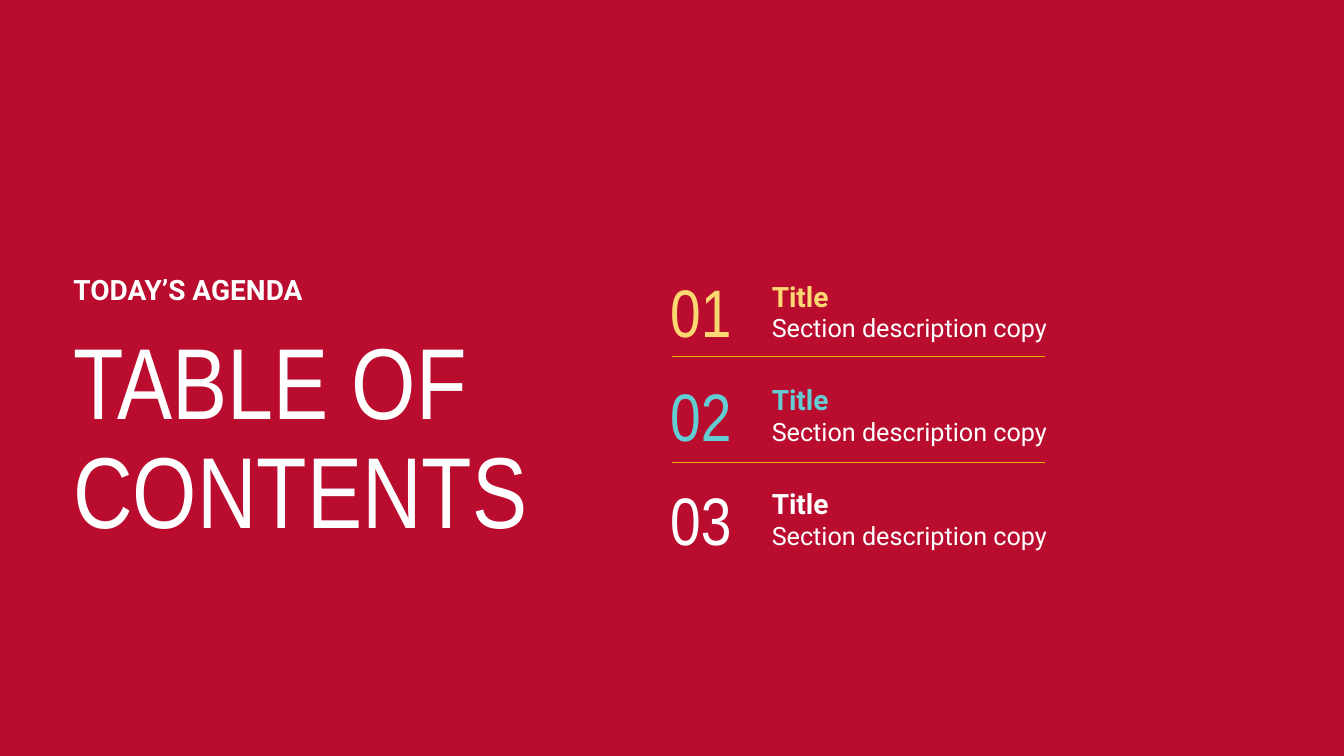
"""Build a table of contents slide with three numbered sections."""
import dataclasses

import lxml.etree
import pptx
import pptx.dml.color
import pptx.enum.shapes
import pptx.enum.text
import pptx.oxml.ns
import pptx.slide
import pptx.text.text
import pptx.util

Cm = pptx.util.Cm


@dataclasses.dataclass(frozen=True)
class Theme:
    background: str = "BA0C2F"
    white: str = "FFFFFF"
    yellow: str = "FBD872"
    teal: str = "63CDD4"
    rule: str = "EAB000"
    display_font: str = "Arial Narrow"
    body_font: str = "Roboto"
    title_size: int = 72
    number_size: int = 48
    heading_size: int = 20
    copy_size: int = 18
    rule_width: float = 0.75


THEME = Theme()


@dataclasses.dataclass(frozen=True)
class Style:
    font: str
    size: int
    colour: str
    bold: bool = False


@dataclasses.dataclass(frozen=True)
class Frame:
    left: float
    top: float
    width: float
    height: float


@dataclasses.dataclass(frozen=True)
class Section:
    number: str
    title: str
    description: str
    colour: str


SECTIONS = [
    Section("01", "Title", "Section description copy", THEME.yellow),
    Section("02", "Title", "Section description copy", THEME.teal),
    Section("03", "Title", "Section description copy", THEME.white),
]
SECTION_PITCH = 2.61
RULE_LEFT, RULE_RIGHT = 16.94, 26.34
RULE_TOP, RULE_PITCH = 8.99, 2.66


def rgb(colour: str) -> pptx.dml.color.RGBColor:
    return pptx.dml.color.RGBColor.from_string(colour)


def add_text(page: pptx.slide.Slide, frame: Frame,
             lines: list[tuple[str, Style]]) -> pptx.text.text.TextFrame:
    box = page.shapes.add_textbox(
        Cm(frame.left), Cm(frame.top), Cm(frame.width), Cm(frame.height))
    text_frame = box.text_frame
    text_frame.word_wrap = True
    text_frame.text = "\n".join(text for text, _ in lines)
    for para, (_, style) in zip(text_frame.paragraphs, lines):
        for span in para.runs:
            span.font.name = style.font
            span.font.size = pptx.util.Pt(style.size)
            span.font.bold = style.bold
            span.font.color.rgb = rgb(style.colour)
    return text_frame


def add_section(page: pptx.slide.Slide, section: Section, offset: float) -> None:
    number = Style(THEME.display_font, THEME.number_size, section.colour)
    heading = Style(THEME.body_font, THEME.heading_size, section.colour, True)
    copy = Style(THEME.body_font, THEME.copy_size, THEME.white)
    add_text(page, Frame(16.64, 6.7 + offset, 2.57, 2.31),
             [(section.number, number)])
    add_text(page, Frame(19.2, 6.91 + offset, 8.61, 1.88),
             [(section.title, heading), (section.description, copy)])


def add_rule(page: pptx.slide.Slide, top: float) -> None:
    rule = page.shapes.add_connector(
        pptx.enum.shapes.MSO_CONNECTOR.STRAIGHT,
        Cm(RULE_LEFT), Cm(top), Cm(RULE_RIGHT), Cm(top))
    rule.line.color.rgb = rgb(THEME.rule)
    rule.line.width = pptx.util.Pt(THEME.rule_width)
    properties = rule.element.find(pptx.oxml.ns.qn("p:spPr"))
    lxml.etree.SubElement(properties, pptx.oxml.ns.qn("a:effectLst"))


def main() -> None:
    deck = pptx.Presentation()
    deck.slide_width, deck.slide_height = Cm(33.87), Cm(19.05)
    page = deck.slides.add_slide(deck.slide_layouts[6])
    page.background.fill.solid()
    page.background.fill.fore_color.rgb = rgb(THEME.background)

    title = add_text(
        page, Frame(1.6, 8.74, 13.51, 4.78),
        [("TABLE OF CONTENTS",
          Style(THEME.display_font, THEME.title_size, THEME.white))])
    title.vertical_anchor = pptx.enum.text.MSO_ANCHOR.MIDDLE
    title.paragraphs[0].line_spacing = 0.9
    add_text(page, Frame(1.6, 6.73, 8.1, 1.12),
             [("TODAY’S AGENDA",
               Style(THEME.body_font, THEME.heading_size, THEME.white, True))])

    for index, section in enumerate(SECTIONS):
        add_section(page, section, index * SECTION_PITCH)
    for index in range(len(SECTIONS) - 1):
        add_rule(page, RULE_TOP + index * RULE_PITCH)

    deck.save("out.pptx")


if __name__ == "__main__":
    main()
